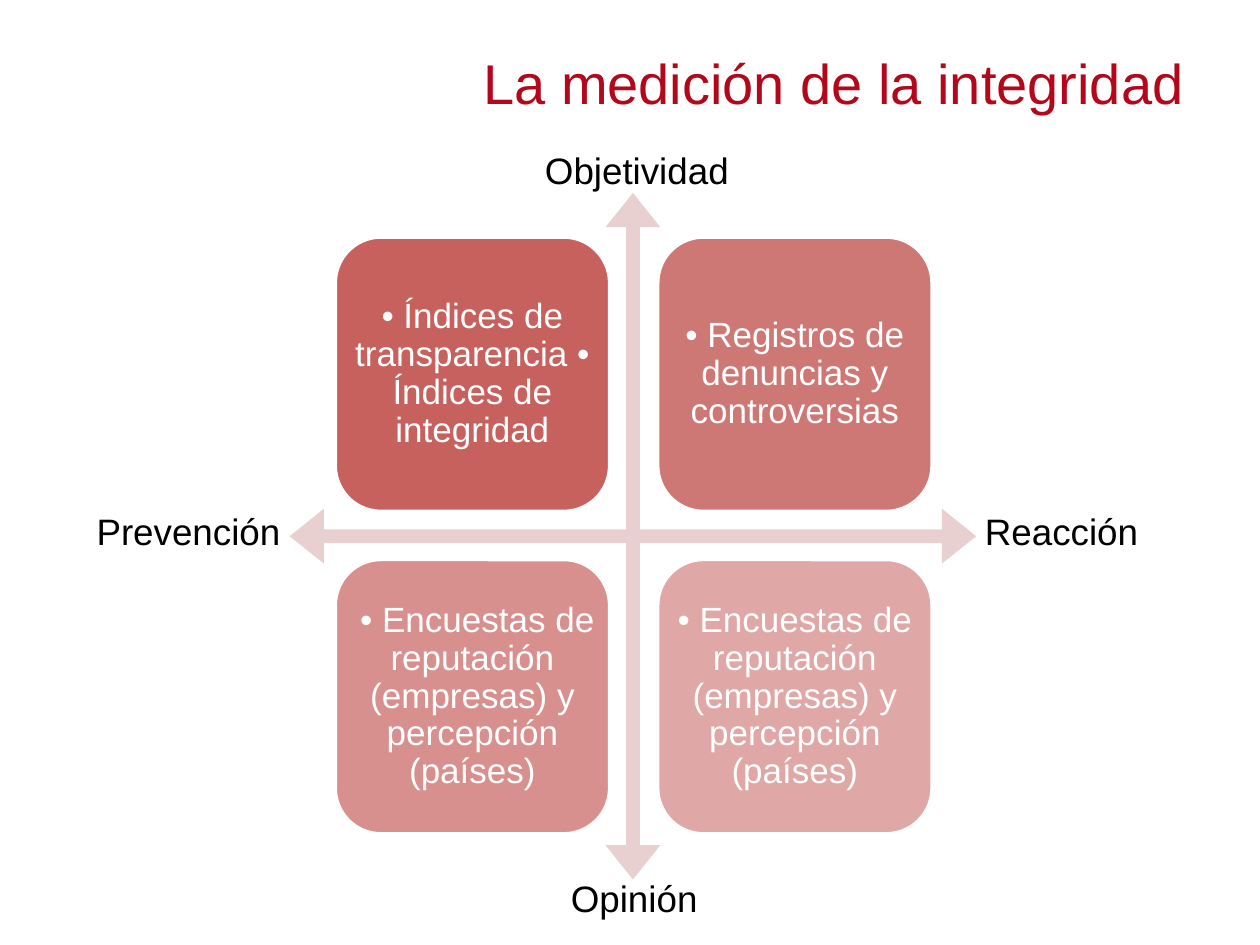
from dataclasses import dataclass

import pptx
import pptx.dml.color
import pptx.enum.shapes
import pptx.enum.text
import pptx.oxml
import pptx.oxml.ns
import pptx.util
from pptx.util import Cm

COLORS = {
    "title": "B3071B",
    "axes": "E8D0D0",
    "panel": "C0504D",
    "light": "FFFFFF",
    "dark": "000000",
}
FONT = "Arial"
ALIGN = pptx.enum.text.PP_ALIGN
SHAPE = pptx.enum.shapes.MSO_SHAPE

# Grid of the four panels, in cm
GRID_LEFT, GRID_TOP = 6.76, 4.78
PANEL_SIZE, PANEL_STEP = 5.53, 6.5


@dataclass
class Panel:
    text: str
    column: int
    row: int
    opacity: int


@dataclass
class AxisLabel:
    text: str
    left: float
    top: float
    width: float


PANELS = [
    Panel("• Índices de transparencia • Índices de integridad", 0, 0, 90),
    Panel("• Registros de denuncias y controversias", 1, 0, 77),
    Panel(" • Encuestas de reputación (empresas) y percepción (países)", 0, 1, 63),
    Panel("• Encuestas de reputación (empresas) y percepción (países)", 1, 1, 50),
]
AXIS_LABELS = [
    AxisLabel("Objetividad", 10.59, 2.87, 4.5),
    AxisLabel("Opinión", 10.69, 17.53, 4.19),
    AxisLabel("Reacción", 18.9, 10.13, 5),
    AxisLabel("Prevención", 1.3, 10.13, 5),
]


def rgb(name: str) -> pptx.dml.color.RGBColor:
    return pptx.dml.color.RGBColor.from_string(COLORS[name])


def write(frame, text: str, size: float, color: str, align, inset: float,
          spacing: float = 0.9) -> None:
    """Fill a text frame with one formatted, vertically centred paragraph."""
    frame.text = text
    frame.word_wrap = True
    frame.vertical_anchor = pptx.enum.text.MSO_ANCHOR.MIDDLE
    frame.margin_left = frame.margin_right = Cm(inset)
    frame.margin_top = frame.margin_bottom = Cm(inset)
    paragraph = frame.paragraphs[0]
    paragraph.alignment = align
    paragraph.line_spacing = spacing
    font = paragraph.runs[0].font
    font.name, font.size = FONT, pptx.util.Pt(size)
    font.color.rgb = rgb(color)


def draw_title(slide, text: str) -> None:
    title = slide.shapes.title
    title.left, title.top = Cm(8.31), Cm(0.84)
    title.width, title.height = Cm(15.82), Cm(1.63)
    write(title.text_frame, text, 32, "title", ALIGN.RIGHT, 0.25, 1.0)


def draw_axes(slide) -> None:
    axes = slide.shapes.add_shape(
        SHAPE.QUAD_ARROW, Cm(5.84), Cm(3.89), Cm(13.84), Cm(13.84))
    for index, value in enumerate((0.02, 0.04, 0.05)):
        axes.adjustments[index] = value
    axes.shadow.inherit = False
    axes.fill.solid()
    axes.fill.fore_color.rgb = rgb("axes")
    axes.line.fill.background()


def draw_panel(slide, panel: Panel) -> None:
    box = slide.shapes.add_shape(
        SHAPE.ROUNDED_RECTANGLE,
        Cm(GRID_LEFT + panel.column * PANEL_STEP),
        Cm(GRID_TOP + panel.row * PANEL_STEP),
        Cm(PANEL_SIZE), Cm(PANEL_SIZE))
    box.shadow.inherit = False
    box.fill.solid()
    box.fill.fore_color.rgb = rgb("panel")
    box.line.color.rgb = rgb("light")
    box.line.width = pptx.util.Pt(2)
    # Opacity of the fill
    fill_color = box.fill._xPr.find(".//" + pptx.oxml.ns.qn("a:srgbClr"))
    alpha = pptx.oxml.parse_xml(
        f'<a:alpha {pptx.oxml.ns.nsdecls("a")} val="{panel.opacity * 1000}"/>')
    fill_color.append(alpha)
    # The rounded corners already keep the text off the edges
    write(box.text_frame, panel.text, 20, "light", ALIGN.CENTER, 0)


def draw_axis_label(slide, label: AxisLabel) -> None:
    box = slide.shapes.add_textbox(
        Cm(label.left), Cm(label.top), Cm(label.width), Cm(1.24))
    write(box.text_frame, label.text, 21, "dark", ALIGN.CENTER, 0.23)
    box.text_frame.auto_size = pptx.enum.text.MSO_AUTO_SIZE.SHAPE_TO_FIT_TEXT


def main() -> None:
    presentation = pptx.Presentation()
    presentation.slide_width, presentation.slide_height = Cm(25.4), Cm(19.05)
    slide = presentation.slides.add_slide(presentation.slide_layouts[5])

    draw_title(slide, "La medición de la integridad")
    draw_axes(slide)
    for panel in PANELS:
        draw_panel(slide, panel)
    for label in AXIS_LABELS:
        draw_axis_label(slide, label)

    presentation.save("out.pptx")


if __name__ == "__main__":
    main()
